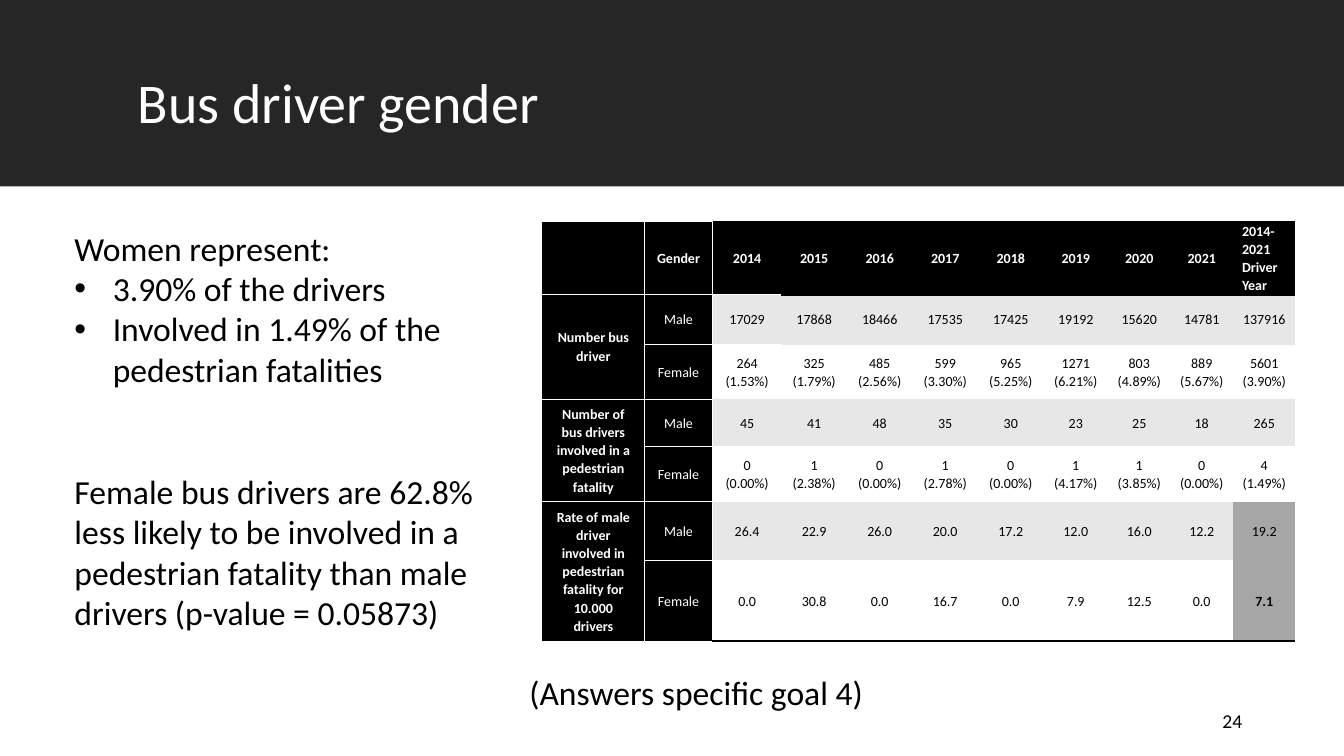
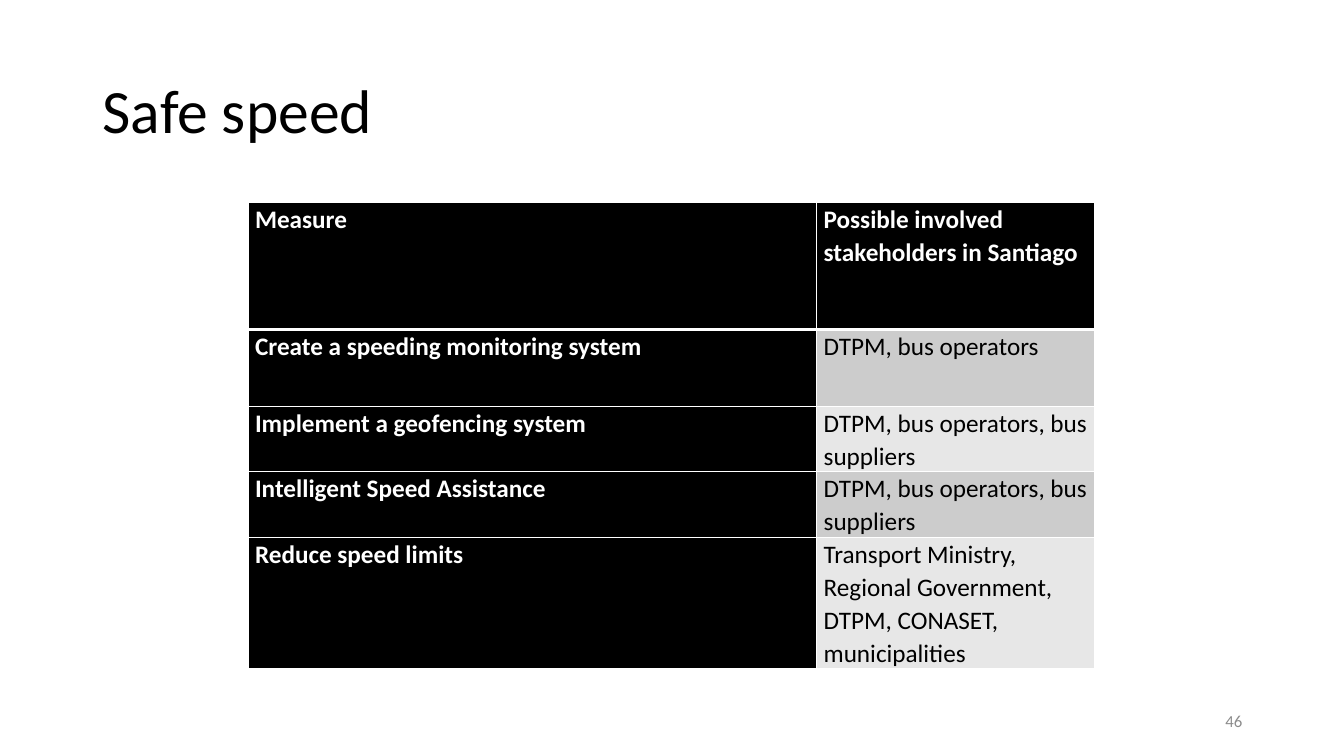
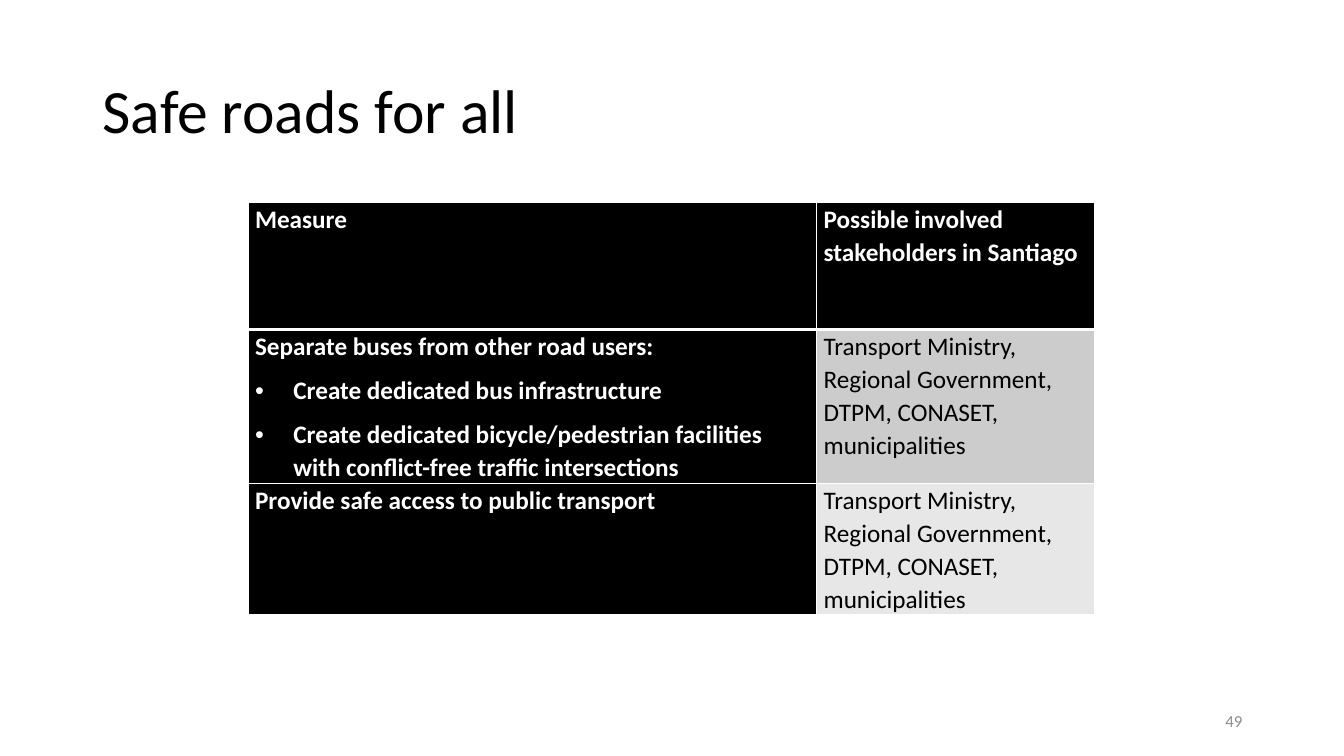
from lxml import etree
from pptx import Presentation
from pptx.dml.color import RGBColor
from pptx.enum.shapes import MSO_SHAPE
from pptx.enum.text import MSO_ANCHOR, PP_ALIGN
from pptx.oxml.ns import qn
from pptx.util import Inches, Pt

RECTANGLE = MSO_SHAPE.RECTANGLE
TOP, MIDDLE = MSO_ANCHOR.TOP, MSO_ANCHOR.MIDDLE
LEFT, CENTER, RIGHT = PP_ALIGN.LEFT, PP_ALIGN.CENTER, PP_ALIGN.RIGHT

FONT = "Calibri"
COLORS = {
    "black": "000000", "white": "FFFFFF", "band": "262626", "number": "8C8C8C",
    "light": "E7E7E7", "medium": "CCCCCC", "highlight": "A6A6A6",
}
PLAIN_TABLE_STYLE = "{2D5ABB26-0587-4C30-8999-92F81FD0307C}"
LINE_SPACING = 1.07
BULLET_INDENT = 0.38
NUMBER_AREA = (9.42, 6.95, 3, 0.4)

# A paragraph is a text, or a text with its format values.
BULLET = {"bullet": True}
GENDER_FINDINGS = [
    "Women represent:",
    ("3.90% of the drivers", BULLET),
    ("Involved in 1.49% of the pedestrian fatalities", BULLET),
    ("Female bus drivers are 62.8% less likely to be involved in a pedestrian "
     "fatality than male drivers (p-value = 0.05873)", {"space_before": Pt(58.6)}),
]
GENDER_HEADER = ["", "Gender", "2014", "2015", "2016", "2017", "2018", "2019",
                 "2020", "2021", "2014-2021 Driver Year"]
GENDER_GROUPS = [
    ("Number bus driver",
     ["17029", "17868", "18466", "17535", "17425", "19192", "15620", "14781", "137916"],
     ["264 (1.53%)", "325 (1.79%)", "485 (2.56%)", "599 (3.30%)", "965 (5.25%)",
      "1271 (6.21%)", "803 (4.89%)", "889 (5.67%)", "5601 (3.90%)"]),
    ("Number of bus drivers involved in a pedestrian fatality",
     ["45", "41", "48", "35", "30", "23", "25", "18", "265"],
     ["0 (0.00%)", "1 (2.38%)", "0 (0.00%)", "1 (2.78%)", "0 (0.00%)",
      "1 (4.17%)", "1 (3.85%)", "0 (0.00%)", "4 (1.49%)"]),
    ("Rate of male driver involved in pedestrian fatality for 10.000 drivers",
     ["26.4", "22.9", "26.0", "20.0", "17.2", "12.0", "16.0", "12.2", "19.2"],
     ["0.0", "30.8", "0.0", "16.7", "0.0", "7.9", "12.5", "0.0", "7.1"]),
]
GENDER_WIDTHS = [1.01, 0.68, 0.68, 0.65, 0.65, 0.65, 0.65, 0.64, 0.62, 0.62, 0.62]
GENDER_HEIGHTS = [0.72, 0.5, 0.54, 0.47, 0.55, 0.58, 0.8]

MEASURE_HEADER = ("Measure", "Possible involved stakeholders in Santiago")
MEASURE_WIDTHS = [5.64, 2.76]
AUTHORITIES = "Transport Ministry, Regional Government, DTPM, CONASET, municipalities"
SUPPLIERS = "DTPM, bus operators, bus suppliers"
MEASURE_SLIDES = [
    ("Safe speed", "46", [1.26, 0.76, 0.65, 0.65, 1.3], [
        ("Create a speeding monitoring system", "DTPM, bus operators"),
        ("Implement a geofencing system", SUPPLIERS),
        ("Intelligent Speed Assistance", SUPPLIERS),
        ("Reduce speed limits", AUTHORITIES),
    ]),
    ("Safe roads for all", "49", [1.26, 1.53, 1.3], [
        (["Separate buses from other road users:",
          ("Create dedicated bus infrastructure", BULLET),
          ("Create dedicated bicycle/pedestrian facilities with conflict-free "
           "traffic intersections", BULLET)], AUTHORITIES),
        ("Provide safe access to public transport", AUTHORITIES),
    ]),
]


def rgb(name):
    return RGBColor.from_string(COLORS[name])


def add_bullet(para):
    properties = para._p.get_or_add_pPr()
    properties.set("marL", str(Inches(BULLET_INDENT)))
    properties.set("indent", str(-Inches(BULLET_INDENT)))
    etree.SubElement(properties, qn("a:buFont")).set("typeface", "Arial")
    etree.SubElement(properties, qn("a:buChar")).set("char", "•")


def write(frame, paragraphs, size, color="black", bold=False, **paragraph_format):
    if isinstance(paragraphs, str):
        paragraphs = [paragraphs]
    for index, item in enumerate(paragraphs):
        text, extra = (item, {}) if isinstance(item, str) else item
        para = frame.paragraphs[0] if index == 0 else frame.add_paragraph()
        if extra.get("bullet"):
            add_bullet(para)
        for name, value in {**paragraph_format, **extra}.items():
            if name != "bullet":
                setattr(para, name, value)
        span = para.add_run()
        span.text = text
        for name, value in {"name": FONT, "size": Pt(size), "bold": bold}.items():
            setattr(span.font, name, value)
        span.font.color.rgb = rgb(color)


def add_text(page, area, paragraphs, size, color="black", anchor=TOP, **paragraph_format):
    box = page.shapes.add_textbox(*map(Inches, area))
    box.text_frame.word_wrap = True
    box.text_frame.vertical_anchor = anchor
    write(box.text_frame, paragraphs, size, color, **paragraph_format)


def add_plain_table(page, left, top, widths, heights):
    area = map(Inches, (left, top, sum(widths), sum(heights)))
    table = page.shapes.add_table(len(heights), len(widths), *area).table
    table.first_row = table.horz_banding = False
    table._tbl.tblPr.find(qn("a:tableStyleId")).text = PLAIN_TABLE_STYLE
    for column, width in zip(table.columns, widths):
        column.width = Inches(width)
    for row, height in zip(table.rows, heights):
        row.height = Inches(height)
    return table


def dress_cell(cell, fill, borders, side_margin, end_margin=0, anchor=TOP):
    """Set the borders, {side: (colour, points)}, then the fill and margins."""
    properties = cell._tc.get_or_add_tcPr()
    for side in "LRTB":
        if side in borders:
            color, points = borders[side]
            line = etree.SubElement(properties, qn("a:ln" + side), w=str(Pt(points)))
            solid = etree.SubElement(line, qn("a:solidFill"))
            etree.SubElement(solid, qn("a:srgbClr")).set("val", COLORS[color])
    cell.fill.solid()
    cell.fill.fore_color.rgb = rgb(fill)
    cell.margin_left = cell.margin_right = Inches(side_margin)
    cell.margin_top = cell.margin_bottom = Inches(end_margin)
    cell.vertical_anchor = anchor


def gender_borders(row, col, last_row):
    borders = {}
    if col < 2:
        borders["R" if col == 0 else "L"] = ("white", 1)
        thin = ("white", 0.5)
        if row > 0:
            borders["T"] = thin if row % 2 == 0 else ("white", 1)
        if row < last_row:
            borders["B"] = thin if row % 2 else ("white", 1)
    elif row == 0:
        borders["T"] = ("black", 2)
        borders["B"] = ("white", 1) if col == 2 else ("black", 2)
    elif row == 1 and col == 2:
        borders["T"] = ("white", 1)
    elif row == last_row:
        borders["B"] = ("black", 2)
    return borders


def add_gender_table(page):
    rows = [GENDER_HEADER]
    for label, male, female in GENDER_GROUPS:
        rows += [[label, "Male", *male], ["", "Female", *female]]
    last_row, last_col = len(rows) - 1, len(GENDER_HEADER) - 1
    table = add_plain_table(page, 5.38, 2.2, GENDER_WIDTHS, GENDER_HEIGHTS)
    for row, texts in enumerate(rows):
        for col, text in enumerate(texts):
            is_label = row == 0 or col < 2
            if is_label:
                fill = "black"
            elif col == last_col and row >= last_row - 1:
                fill = "highlight"
            else:
                fill = "light" if row % 2 else "white"
            is_total_header = row == 0 and col == last_col
            margins = (0.1, 0.05) if col == 0 else (0.09, 0)
            cell = table.cell(row, col)
            dress_cell(cell, fill, gender_borders(row, col, last_row), *margins,
                       anchor=TOP if is_total_header else MIDDLE)
            if text:
                write(cell.text_frame, text, 10, "white" if is_label else "black",
                      bold=row == 0 or col == 0 or (row, col) == (last_row, last_col),
                      alignment=LEFT if is_total_header else CENTER,
                      line_spacing=LINE_SPACING)
    for row in range(1, last_row, 2):
        table.cell(row, 0).merge(table.cell(row + 1, 0))


def add_measure_table(page, heights, measures):
    table = add_plain_table(page, 2.46, 2.01, MEASURE_WIDTHS, heights)
    for row, contents in enumerate([MEASURE_HEADER, *measures]):
        borders = {side: ("white", 1) for side in "LRTB"}
        if row < 2:
            borders["B" if row == 0 else "T"] = ("white", 3)
        for col, content in enumerate(contents):
            is_label = row == 0 or col == 0
            fill = "black" if is_label else "medium" if row % 2 else "light"
            cell = table.cell(row, col)
            dress_cell(cell, fill, borders, side_margin=0.07)
            write(cell.text_frame, content, 18, "white" if is_label else "black",
                  bold=is_label, line_spacing=LINE_SPACING, space_after=Pt(8))


def add_page(deck):
    return deck.slides.add_slide(deck.slide_layouts[6])


def add_number(page, number, size, color):
    add_text(page, NUMBER_AREA, number, size, color, MIDDLE, alignment=RIGHT)


def build_gender_page(deck):
    page = add_page(deck)
    band = page.shapes.add_shape(RECTANGLE, 0, 0, deck.slide_width, Inches(1.85))
    band.shadow.inherit = False
    band.fill.solid()
    band.fill.fore_color.rgb = rgb("band")
    band.line.fill.background()
    add_text(page, (1.27, 0.7, 10.81, 0.98), "Bus driver gender", 40, "white",
             line_spacing=0.9)
    add_text(page, (0.64, 2.21, 4.45, 4.14), GENDER_FINDINGS, 24)
    add_gender_table(page)
    add_number(page, "24", 14, "black")
    add_text(page, (3.57, 6.62, 6.67, 0.5), "(Answers specific goal 4)", 24,
             alignment=CENTER)


def build_measure_page(deck, title, number, heights, measures):
    page = add_page(deck)
    add_text(page, (0.92, 0.4, 11.5, 1.45), title, 44, anchor=MIDDLE, line_spacing=0.9)
    add_measure_table(page, heights, measures)
    add_number(page, number, 12, "number")


def main():
    deck = Presentation()
    deck.slide_width, deck.slide_height = Inches(13.33), Inches(7.5)
    build_gender_page(deck)
    for measure_slide in MEASURE_SLIDES:
        build_measure_page(deck, *measure_slide)
    deck.save("out.pptx")


if __name__ == "__main__":
    main()
